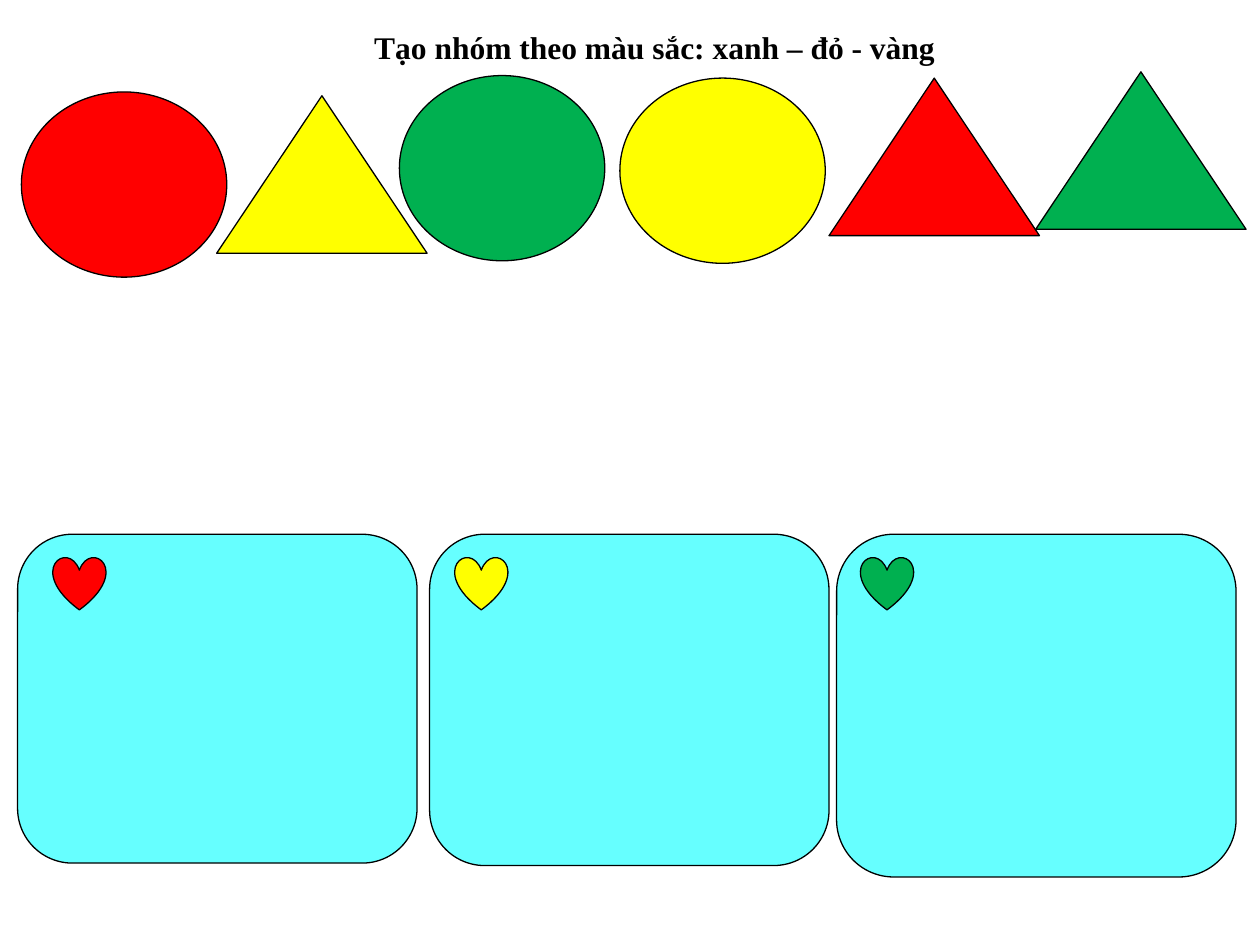
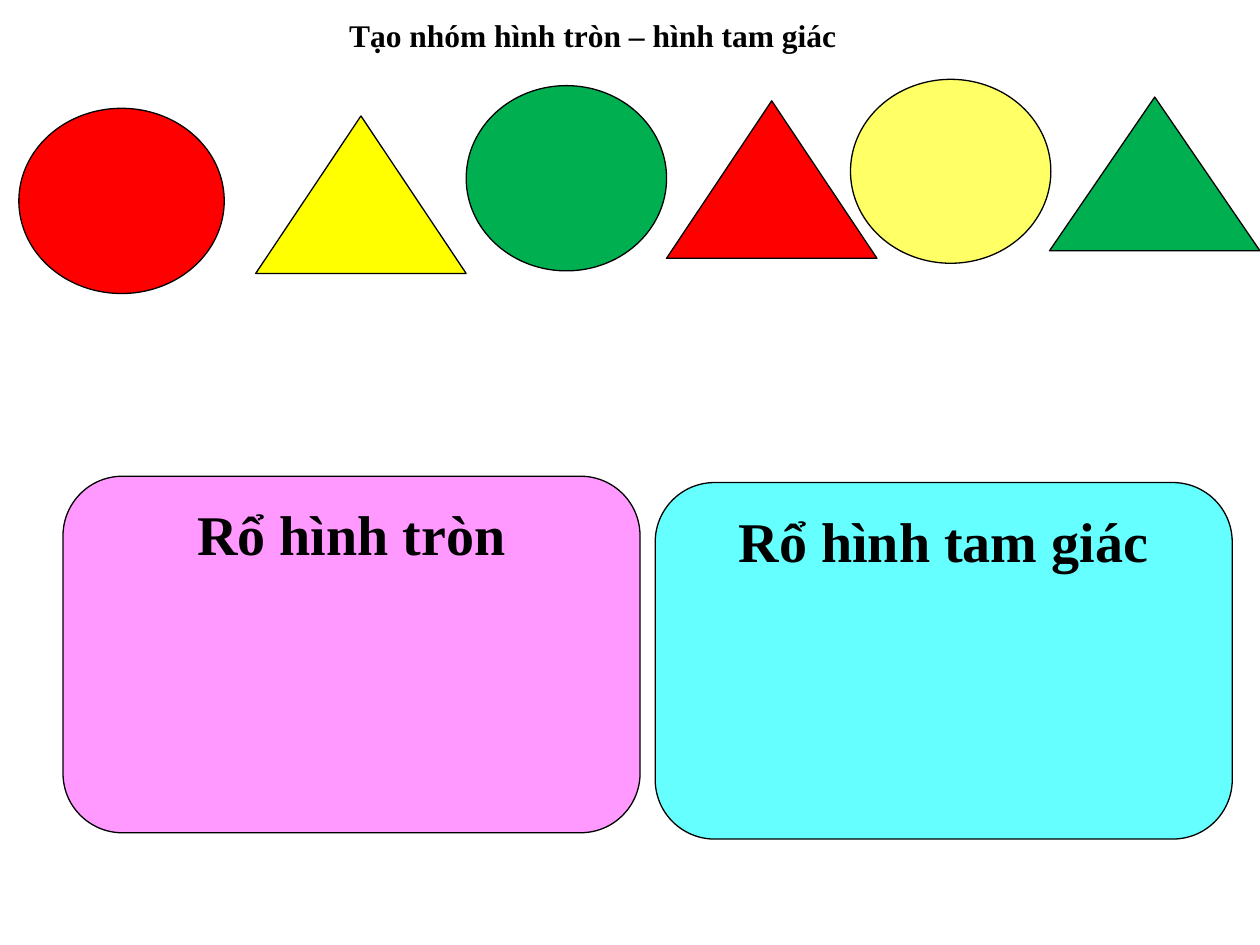
import pptx
import pptx.util
import pptx.dml.color
import pptx.enum.shapes
import pptx.enum.text

Inches = pptx.util.Inches
RGBColor = pptx.dml.color.RGBColor
MSO_SHAPE = pptx.enum.shapes.MSO_SHAPE
PP_ALIGN = pptx.enum.text.PP_ALIGN
MSO_ANCHOR = pptx.enum.text.MSO_ANCHOR
MSO_AUTO_SIZE = pptx.enum.text.MSO_AUTO_SIZE

BLACK = RGBColor(0, 0, 0)
RED = RGBColor(0xFF, 0, 0)
YELLOW = RGBColor(0xFF, 0xFF, 0)
PALE_YELLOW = RGBColor(0xFF, 0xFF, 0x66)
GREEN = RGBColor(0, 0xB0, 0x50)
CYAN = RGBColor(0x66, 0xFF, 0xFF)
PINK = RGBColor(0xFF, 0x99, 0xFF)

FONT = "Times New Roman"
TITLE_SIZE = 18
LABEL_SIZE = 32
HEART_SIZE = 0.42
CIRCLE = MSO_SHAPE.OVAL
TRIANGLE = MSO_SHAPE.ISOSCELES_TRIANGLE
CIRCLE_SIZE = (1.63, 1.47)
SMALL_CIRCLE_SIZE = (1.59, 1.47)
TRIANGLE_SIZE = (1.67, 1.25)


def write_text(frame, text, size, align):
    frame.text = text
    frame.vertical_anchor = MSO_ANCHOR.TOP
    paragraph = frame.paragraphs[0]
    paragraph.alignment = align
    paragraph.font.name = FONT
    paragraph.font.size = pptx.util.Pt(size)
    paragraph.font.bold = True
    paragraph.font.color.rgb = BLACK


def add_outlined(slide, kind, box, color):
    figure = slide.shapes.add_shape(kind, *map(Inches, box))
    figure.shadow.inherit = False
    figure.fill.solid()
    figure.fill.fore_color.rgb = color
    figure.line.color.rgb = BLACK
    figure.line.width = pptx.util.Pt(0.75)
    return figure


def add_titled_slide(deck, text, box):
    slide = deck.slides.add_slide(deck.slide_layouts[5])
    title = slide.shapes.title
    title.left, title.top, title.width, title.height = map(Inches, box)
    write_text(title.text_frame, text, TITLE_SIZE, PP_ALIGN.LEFT)
    title.text_frame.word_wrap = False
    title.text_frame.auto_size = MSO_AUTO_SIZE.NONE
    return slide


def add_figure_row(slide, left, top, figures):
    for kind, color, x, y, size in figures:
        add_outlined(slide, kind, (left + x, top + y, *size), color)


def add_basket(slide, box, color):
    return add_outlined(slide, MSO_SHAPE.ROUNDED_RECTANGLE, box, color)


def add_heart_basket(slide, box, heart_color, heart_indent):
    add_basket(slide, box, CYAN)
    left, top = box[:2]
    heart_box = (left + heart_indent, top + 0.18, HEART_SIZE, HEART_SIZE)
    add_outlined(slide, MSO_SHAPE.HEART, heart_box, heart_color)


def add_labelled_basket(slide, box, color, label):
    basket = add_basket(slide, box, color)
    write_text(basket.text_frame, label, LABEL_SIZE, PP_ALIGN.CENTER)


def build_color_slide(deck):
    slide = add_titled_slide(
        deck, "Tạo nhóm theo màu sắc: xanh – đỏ - vàng", (2.87, 0.17, 4.7, 0.4))
    for left, height, heart_color, heart_indent in (
            (0.14, 2.61, RED, 0.28),
            (3.41, 2.63, YELLOW, 0.2),
            (6.64, 2.72, GREEN, 0.19)):
        add_heart_basket(slide, (left, 4.24, 3.17, height), heart_color, heart_indent)
    add_figure_row(slide, 0.17, 0.57, (
        (CIRCLE, RED, 0, 0.16, CIRCLE_SIZE),
        (TRIANGLE, YELLOW, 1.55, 0.19, TRIANGLE_SIZE),
        (CIRCLE, GREEN, 3, 0.03, CIRCLE_SIZE),
        (CIRCLE, YELLOW, 4.75, 0.05, CIRCLE_SIZE),
        (TRIANGLE, RED, 6.41, 0.05, TRIANGLE_SIZE),
        (TRIANGLE, GREEN, 8.05, 0, TRIANGLE_SIZE)))


def build_shape_slide(deck):
    slide = add_titled_slide(
        deck, "Tạo nhóm hình tròn – hình tam giác", (2.67, 0.08, 4.67, 0.42))
    add_labelled_basket(slide, (0.5, 3.78, 4.58, 2.83), PINK, "Rổ hình tròn")
    add_labelled_basket(slide, (5.2, 3.83, 4.58, 2.83), CYAN, "Rổ hình tam giác")
    add_figure_row(slide, 0.15, 0.63, (
        (CIRCLE, RED, 0, 0.23, CIRCLE_SIZE),
        (TRIANGLE, YELLOW, 1.88, 0.29, TRIANGLE_SIZE),
        (CIRCLE, GREEN, 3.55, 0.05, SMALL_CIRCLE_SIZE),
        (CIRCLE, PALE_YELLOW, 6.6, 0, (1.59, 1.46)),
        (TRIANGLE, RED, 5.14, 0.17, TRIANGLE_SIZE),
        (TRIANGLE, GREEN, 8.18, 0.14, (1.67, 1.22))))


def main():
    deck = pptx.Presentation()
    deck.slide_width = Inches(10)
    deck.slide_height = Inches(7.5)
    build_color_slide(deck)
    build_shape_slide(deck)
    deck.save("out.pptx")


if __name__ == "__main__":
    main()
